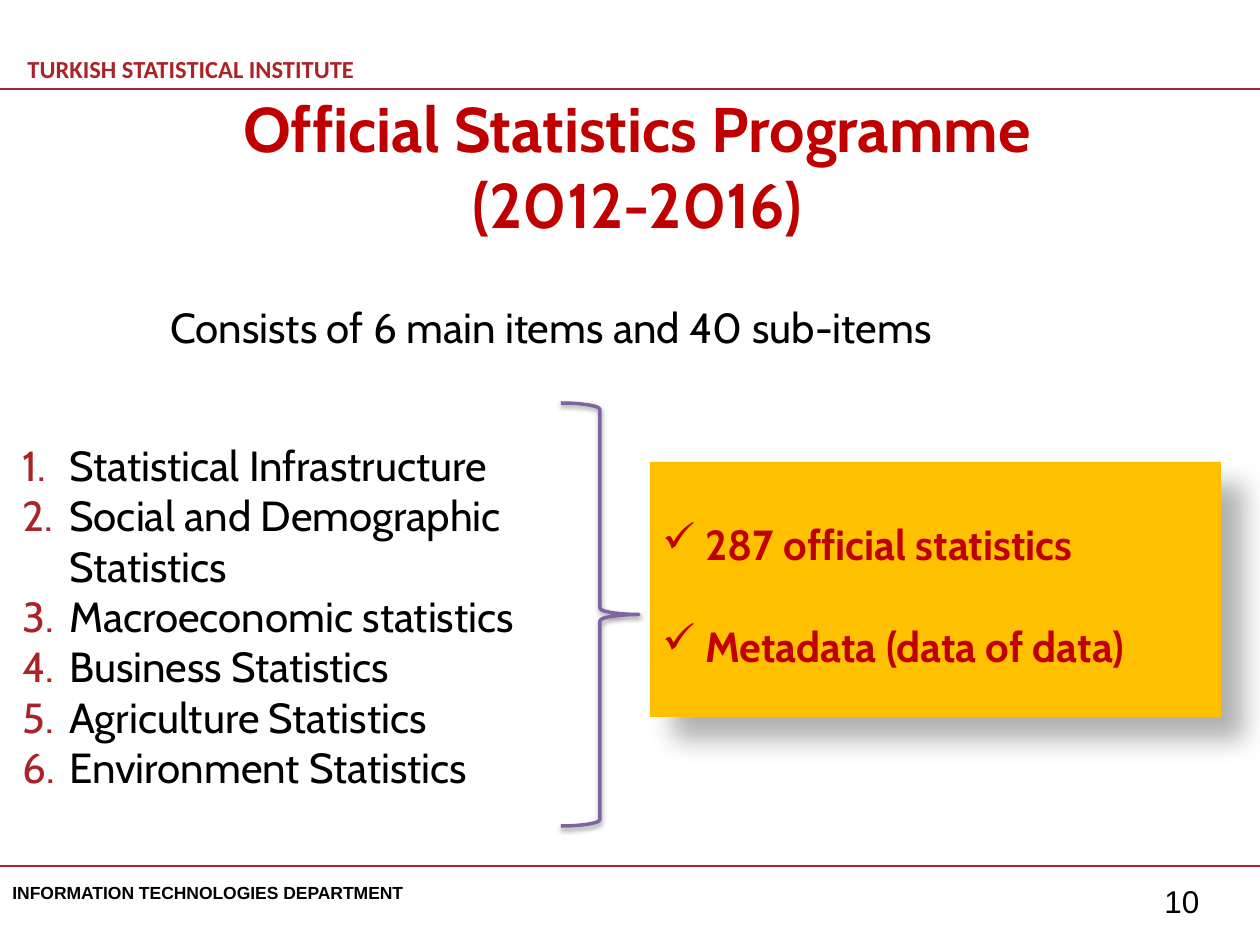
from lxml import etree
from pptx import Presentation, util as u
from pptx.dml.color import RGBColor
from pptx.enum import shapes, text
from pptx.oxml import ns

PX = 914400 / 126
COLORS = {"red": "AB2328", "title": "C00000", "black": "000000",
          "amber": "FFC000", "purple": "8064A2"}


def write(shape, lines, size, font, color, bold=False, align=None, bullet=None, indent=0):
    """Fill a shape with one paragraph per line; bullet is a list of (tag, attributes)."""
    frame = shape.text_frame
    frame.text = "\n".join(lines)
    for paragraph in frame.paragraphs:
        paragraph.alignment = align
        if bullet:
            properties = paragraph._p.get_or_add_pPr()
            properties.set("marL", str(round(indent * PX)))
            properties.set("indent", str(round(-indent * PX)))
            color_element = etree.SubElement(properties, ns.qn("a:buClr"))
            etree.SubElement(color_element, ns.qn("a:srgbClr"), val=COLORS["red" if bullet[0] == "buAutoNum" else color])
            etree.SubElement(properties, ns.qn("a:" + bullet[0]), bullet[1])
        for run in paragraph.runs:
            run.font.size = u.Pt(size)
            run.font.name = font
            run.font.bold = bold
            run.font.color.rgb = RGBColor.from_string(COLORS[color])


def add_shadow(shape, opacity, blur, distance, angle):
    """Give a shape an outer shadow: percent, points, points, degrees."""
    shape.shadow.inherit = False
    effects = shape._element.spPr.find(ns.qn("a:effectLst"))
    shadow = etree.SubElement(effects, ns.qn("a:outerShdw"), blurRad=str(u.Pt(blur)),
                              dist=str(u.Pt(distance)), dir=str(angle * 60000),
                              algn="ctr", rotWithShape="0")
    color = etree.SubElement(shadow, ns.qn("a:srgbClr"), val=COLORS["black"])
    etree.SubElement(color, ns.qn("a:alpha"), val=str(opacity * 1000))


presentation = Presentation()
presentation.slide_width = u.Inches(10)
presentation.slide_height = u.Inches(7.5)
slide = presentation.slides.add_slide(presentation.slide_layouts[6])

# Header and footer rules
for y in (89, 866):
    rule = slide.shapes.add_connector(shapes.MSO_CONNECTOR.STRAIGHT, 0, round(y * PX),
                                      presentation.slide_width, round(y * PX))
    rule.line.color.rgb = RGBColor.from_string(COLORS["red"])
    rule.line.width = u.Pt(1.5)
    etree.SubElement(rule._element.spPr, ns.qn("a:effectLst"))

# Text boxes: position, anchor, wrap, then the text and its format
top, middle = text.MSO_ANCHOR.TOP, text.MSO_ANCHOR.MIDDLE
items = ["Statistical Infrastructure", "Social and Demographic Statistics",
         "Macroeconomic statistics", "Business Statistics",
         "Agriculture Statistics", "Environment Statistics"]
text_boxes = [
    ((15, 44, 446, 50), middle, True,
     dict(lines=["TURKISH STATISTICAL INSTITUTE"], size=14, font="Calibri", color="red", bold=True)),
    ((0, 876, 423, 34), top, False,
     dict(lines=["INFORMATION TECHNOLOGIES DEPARTMENT"], size=10, font="Arial", color="black", bold=True)),
    ((1152, 876, 88, 50), top, True,
     dict(lines=["10"], size=18, font="Arial", color="black")),
    ((44, 106, 1186, 118), middle, True,
     dict(lines=["Official Statistics Programme", "(2012-2016)"], size=36, font="Cabin",
          color="title", bold=True, align=text.PP_ALIGN.CENTER)),
    ((158, 295, 876, 64), top, True,
     dict(lines=["Consists of 6 main items and 40 sub-items"], size=24, font="Cabin", color="black")),
    ((10, 433, 620, 369), top, True,
     dict(lines=items, size=24, font="Cabin", color="black",
          bullet=("buAutoNum", {"type": "arabicPeriod"}), indent=47)),
]
for box, anchor, wrap, content in text_boxes:
    text_box = slide.shapes.add_textbox(*(round(value * PX) for value in box))
    text_box.text_frame.word_wrap = wrap
    text_box.text_frame.vertical_anchor = anchor
    write(text_box, **content)

# Brace that gathers the items
brace = slide.shapes.add_shape(shapes.MSO_SHAPE.RIGHT_BRACE,
                               *(round(value * PX) for value in (561, 403, 78, 423)))
brace.fill.background()
brace.line.color.rgb = RGBColor.from_string(COLORS["purple"])
brace.line.width = u.Pt(2)
add_shadow(brace, 38, 3.1, 1.6, 90)

# Result panel
panel = slide.shapes.add_shape(shapes.MSO_SHAPE.RECTANGLE,
                               *(round(value * PX) for value in (650, 462, 571, 255)))
panel.fill.solid()
panel.fill.fore_color.rgb = RGBColor.from_string(COLORS["amber"])
panel.line.fill.background()
add_shadow(panel, 30, 15, 18, 45)
panel.text_frame.word_wrap = True
panel.text_frame.vertical_anchor = top
panel.text_frame.margin_top = round(57 * PX)
write(panel, ["287 official statistics", "Metadata (data of data)"], 24, "Cabin", "title",
      bold=True, align=text.PP_ALIGN.JUSTIFY, bullet=("buChar", {"char": "✓"}), indent=43)
panel.text_frame.paragraphs[1].space_before = u.Pt(29)

presentation.save("out.pptx")
